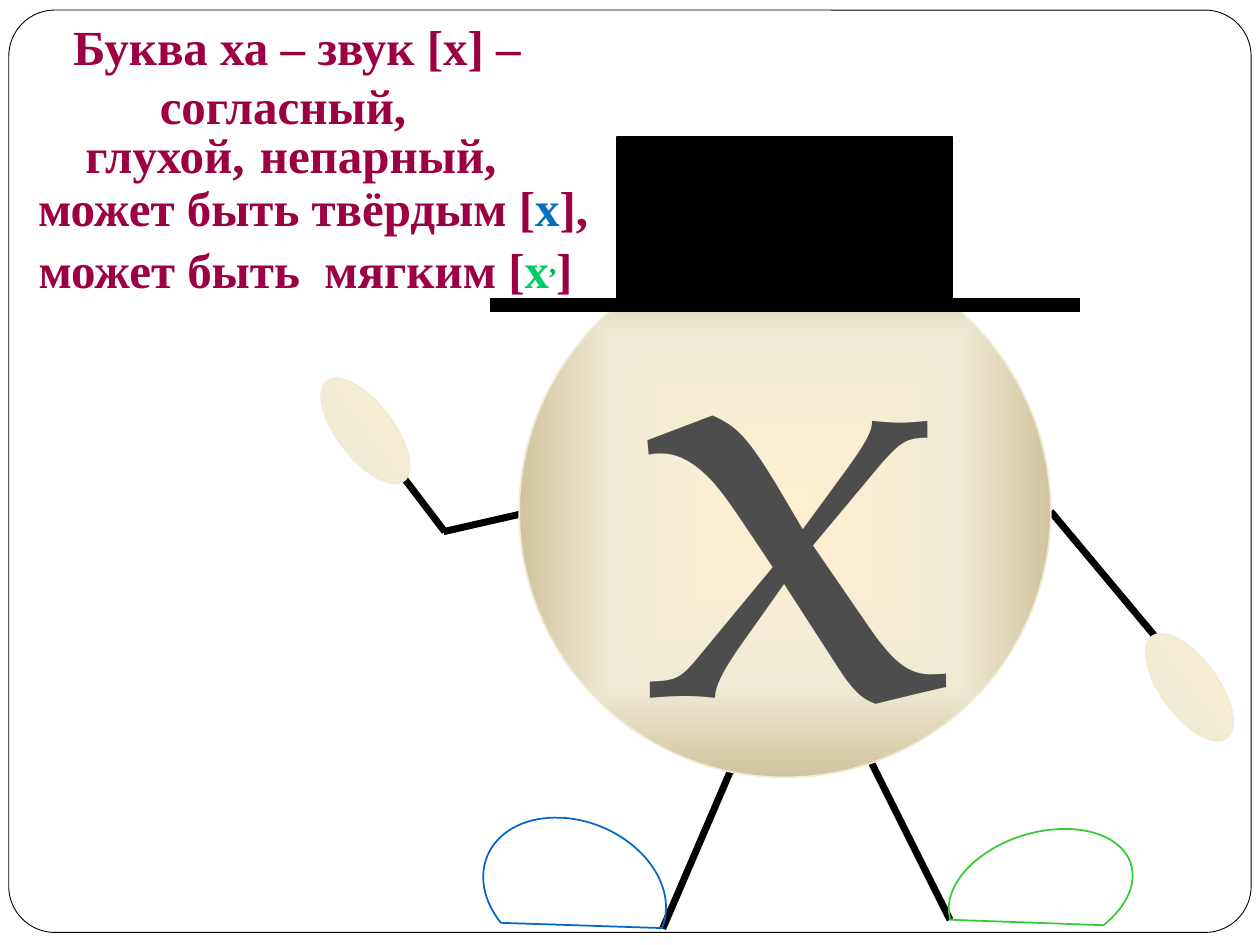
from typing import NamedTuple

from lxml.etree import SubElement
from pptx import Presentation
from pptx.dml.color import RGBColor
from pptx.enum.shapes import MSO_CONNECTOR, MSO_SHAPE as Kind
from pptx.enum.text import MSO_ANCHOR, MSO_AUTO_SIZE, PP_ALIGN as Align
from pptx.oxml.ns import qn
from pptx.util import Inches, Pt

BLACK, WHITE, CREAM = "000000", "FFFFFF", "F0EBD5"
WINE, BLUE, GREEN = "9C0042", "0070C0", "00CC66"
STOPS = ((0, "FFEFD1"), (65, CREAM), (100, "D1C39F"))


class Box(NamedTuple):
    left: float
    top: float
    width: float
    height: float


class Limb(NamedTuple):
    x1: float
    y1: float
    x2: float
    y2: float
    width: float = 4


class Run(NamedTuple):
    text: str
    color: str = WINE
    size: float = 28
    base: int = 0


class Label(NamedTuple):
    box: Box
    runs: tuple[Run, ...]
    align: Align = Align.CENTER


def rgb(code: str) -> RGBColor:
    return RGBColor.from_string(code)


def shade(shape, round_: bool) -> None:
    """Fill with the cream gradient, from the centre if round_, else downward."""
    shape.fill.solid()
    old = shape._element.spPr.find(qn("a:solidFill"))
    grad = old.makeelement(qn("a:gradFill"), {"rotWithShape": "1"})
    stops = SubElement(grad, qn("a:gsLst"))
    for pos, code in STOPS:
        stop = SubElement(stops, qn("a:gs"), pos=str(pos * 1000))
        SubElement(stop, qn("a:srgbClr"), val=code)
    if round_:
        way = SubElement(grad, qn("a:path"), {"path": "shape"})
        SubElement(way, qn("a:fillToRect"), dict.fromkeys("ltrb", "50000"))
    else:
        SubElement(grad, qn("a:lin"), ang="5400000", scaled="0")
    old.getparent().replace(old, grad)


def add_form(slide, kind: Kind, box: Box, line: str, fill: str | None = None,
             width: float = 1, turn: float = 0):
    shape = slide.shapes.add_shape(kind, *map(Inches, box))
    shape.shadow.inherit = False
    shape.rotation = turn
    shape.line.color.rgb = rgb(line)
    shape.line.width = Pt(width)
    if fill:
        shape.fill.solid()
        shape.fill.fore_color.rgb = rgb(fill)
    else:
        shape.fill.background()
    return shape


def add_ball(slide, box: Box, turn: float = 0, round_: bool = False) -> None:
    shade(add_form(slide, Kind.OVAL, box, CREAM, CREAM, turn=turn), round_)


def add_limb(slide, limb: Limb) -> None:
    ends = map(Inches, limb[:4])
    line = slide.shapes.add_connector(MSO_CONNECTOR.STRAIGHT, *ends)
    line.line.color.rgb = rgb(BLACK)
    line.line.width = Pt(limb.width)
    SubElement(line._element.spPr, qn("a:effectLst"))


def add_text(slide, box: Box, runs: tuple[Run, ...], *, align: Align = Align.CENTER,
             font: str = "Times New Roman", bold: bool = True) -> None:
    frame = slide.shapes.add_textbox(*map(Inches, box)).text_frame
    frame.word_wrap = False
    frame.auto_size = MSO_AUTO_SIZE.SHAPE_TO_FIT_TEXT
    frame.vertical_anchor = MSO_ANCHOR.TOP
    para = frame.paragraphs[0]
    para.alignment = align
    for part in runs:
        run = para.add_run()
        run.text = part.text
        run.font.name = font
        run.font.size = Pt(part.size)
        run.font.bold = bold
        run.font.color.rgb = rgb(part.color)
        if part.base:
            run.font._element.set("baseline", str(part.base * 1000))


LIMBS = (
    Limb(3.52, 4.22, 4.22, 4.06),
    Limb(8.34, 4.06, 9.2, 5.09),
    Limb(6.86, 5.94, 7.54, 7.3),
    Limb(5.84, 6.02, 5.26, 7.37),
    Limb(3.05, 3.59, 3.53, 4.22),
)
BRIM = (Limb(3.89, 2.42, 7.64, 2.42, 8.25), Limb(7.4, 2.42, 8.57, 2.42, 8.25))
LABELS = (
    Label(Box(0.47, 0.08, 2.16, 0.57), (Run("Буква ха – "),)),
    Label(Box(2.41, 0.08, 1.93, 0.57), (Run("звук [х] – "),)),
    Label(Box(1.17, 0.55, 2.18, 0.57), (Run("согласный,"),), Align.LEFT),
    Label(Box(0.57, 0.94, 1.54, 0.57), (Run("глухой,"), Run(" ", size=18))),
    Label(Box(1.95, 0.94, 2.2, 0.57), (Run("непарный, "),)),
    Label(Box(0.16, 1.36, 4.65, 0.57),
          (Run("может быть твёрдым ["), Run("х", BLUE), Run("],"))),
    Label(Box(0.16, 1.85, 4.53, 0.57),
          (Run("может быть  мягким ["), Run("х", GREEN),
           Run(",", "00B050", base=30), Run("]"))),
)


def main() -> None:
    deck = Presentation()
    deck.slide_width, deck.slide_height = Inches(10), Inches(7.5)
    slide = deck.slides.add_slide(deck.slide_layouts[6])

    frame = add_form(slide, Kind.ROUNDED_RECTANGLE, Box(0.07, 0.08, 9.86, 7.32),
                     BLACK, WHITE, 0.5)
    frame.adjustments[0] = 0.05

    for limb in LIMBS:
        add_limb(slide, limb)
    add_ball(slide, Box(4.12, 1.95, 4.22, 4.22), round_=True)
    add_ball(slide, Box(8.94, 5.23, 1, 0.45), 53.8)
    add_ball(slide, Box(2.4, 3.2, 1, 0.44), 52.4)

    add_form(slide, Kind.CHORD, Box(4, 6.33, 1.12, 1.5), "0066CC", turn=112.4)
    shoe = add_form(slide, Kind.CHORD, Box(7.79, 6.33, 0.94, 1.5), "33CC33", turn=72.9)
    shoe._element.spPr.find(qn("a:xfrm")).set("flipV", "1")

    add_form(slide, Kind.RECTANGLE, Box(4.9, 1.09, 2.66, 1.31), BLACK, BLACK)
    for limb in BRIM:
        add_limb(slide, limb)

    add_text(slide, Box(4.98, 0.7, 2.52, 5.89), (Run("х", "4D4D4D", 344),),
             align=Align.LEFT, font="TeX Gyre Pagella", bold=False)
    for label in LABELS:
        add_text(slide, label.box, label.runs, align=label.align)

    deck.save("out.pptx")


if __name__ == "__main__":
    main()
